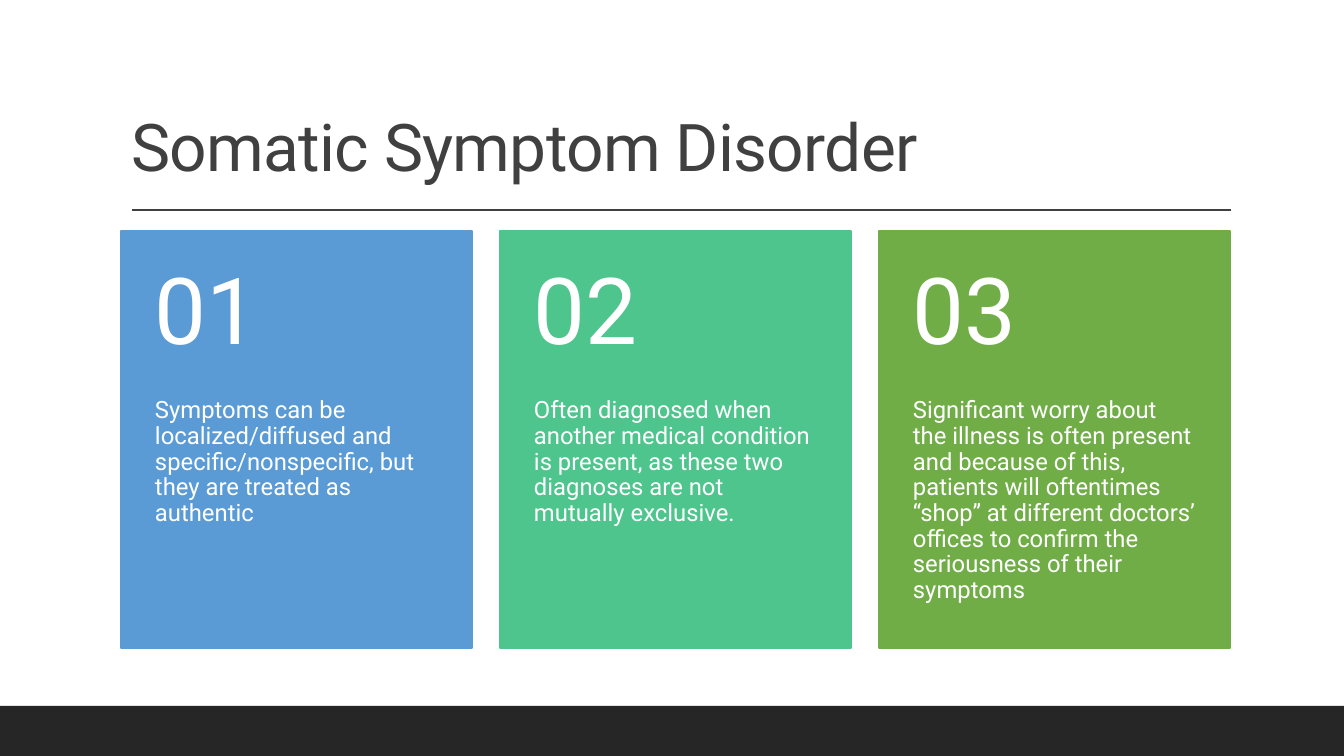
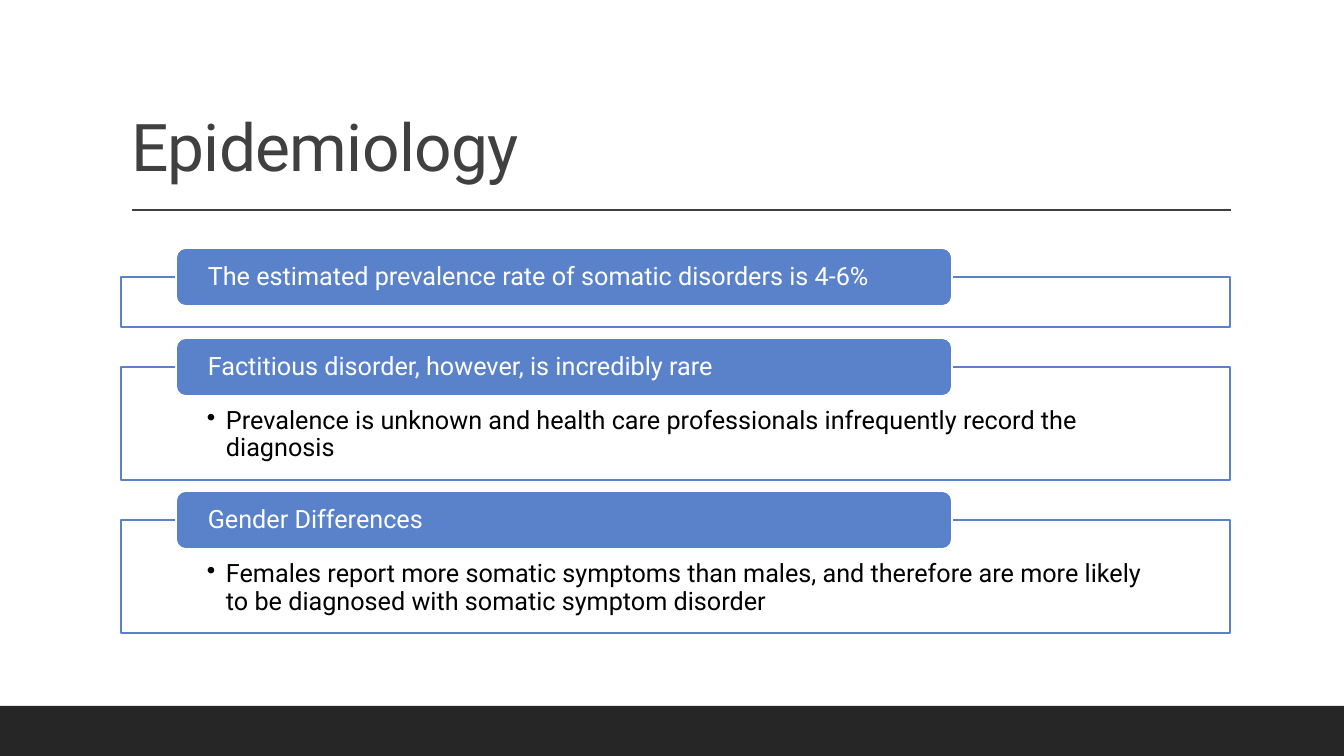
"""Build two slides on somatic symptom disorder and its epidemiology."""
from lxml.etree import SubElement
from pptx import Presentation
from pptx.dml.color import RGBColor
from pptx.enum.shapes import MSO_CONNECTOR, MSO_SHAPE
from pptx.enum.text import MSO_ANCHOR, MSO_AUTO_SIZE, PP_ALIGN
from pptx.oxml.ns import qn
from pptx.util import Pt

SLIDE_WIDTH, SLIDE_HEIGHT = 1344, 756
PX = 12192000 // SLIDE_WIDTH
FONT = "Roboto"
WHITE, BLACK, CHARCOAL, NEAR_BLACK = "FFFFFF", "000000", "404040", "262626"
HEADER_BLUE = "5A82CB"
LEFT, CONTENT_WIDTH = 121, 1109
RULE_LEFT, RULE_RIGHT, RULE_TOP = 132, 1231, 210
BAND_HEIGHT = 50

CARD_TOP, CARD_WIDTH, CARD_HEIGHT, CARD_GAP = 231, 351, 417, 28
NUMBER_HEIGHT = 167
CARDS = [
    ("5B9BD5", "Symptoms can be localized/diffused and specific/nonspecific, "
               "but they are treated as authentic"),
    ("4DC58D", "Often diagnosed when another medical condition is present, "
               "as these two diagnoses are not mutually exclusive."),
    ("70AD47", "Significant worry about the illness is often present and because of this, "
               "patients will oftentimes “shop” at different doctors’ offices "
               "to confirm the seriousness of their symptoms"),
]

FRAME_TOP, FRAME_GAP = 277, 40
HEADER_LEFT, HEADER_WIDTH, HEADER_HEIGHT = 176, 776, 58
BULLET_INDENT = 19
SECTIONS = [
    (50, "The estimated prevalence rate of somatic disorders is 4-6%", None),
    (113, "Factitious disorder, however, is incredibly rare",
     "Prevalence is unknown and health care professionals infrequently record the diagnosis"),
    (113, "Gender Differences",
     "Females report more somatic symptoms than males, and therefore are more likely "
     "to be diagnosed with somatic symptom disorder"),
]


def add_box(slide, kind, bounds, fill, line=None):
    shape = slide.shapes.add_shape(kind, *[length * PX for length in bounds])
    shape.shadow.inherit = False
    shape.fill.solid()
    shape.fill.fore_color.rgb = RGBColor.from_string(fill)
    if line:
        shape.line.color.rgb = RGBColor.from_string(line)
        shape.line.width = Pt(1.25)
    else:
        shape.line.fill.background()
    return shape


def write(shape, text, size, color, anchor, margins):
    frame = shape.text_frame
    frame.word_wrap = True
    frame.auto_size = MSO_AUTO_SIZE.NONE
    frame.vertical_anchor = anchor
    (frame.margin_left, frame.margin_top,
     frame.margin_right, frame.margin_bottom) = [margin * PX for margin in margins]
    paragraph = frame.paragraphs[0]
    paragraph.alignment = PP_ALIGN.LEFT
    paragraph.line_spacing = 0.9
    run = paragraph.add_run()
    run.text = text
    run.font.name = FONT
    run.font.size = Pt(size)
    run.font.color.rgb = RGBColor.from_string(color)
    return paragraph


presentation = Presentation()
presentation.slide_width = SLIDE_WIDTH * PX
presentation.slide_height = SLIDE_HEIGHT * PX
title_only = presentation.slide_layouts[5]

slides = []
for heading in ("Somatic Symptom Disorder", "Epidemiology"):
    slide = presentation.slides.add_slide(title_only)
    title = slide.shapes.title
    title.left, title.top = LEFT * PX, 31 * PX
    title.width, title.height = CONTENT_WIDTH * PX, 160 * PX
    paragraph = write(title, heading, 47, CHARCOAL, MSO_ANCHOR.BOTTOM, (10, 5, 10, 5))
    paragraph.runs[0]._r.get_or_add_rPr().set("spc", "-50")

    rule = slide.shapes.add_connector(
        MSO_CONNECTOR.STRAIGHT,
        RULE_LEFT * PX, RULE_TOP * PX, RULE_RIGHT * PX, RULE_TOP * PX)
    rule.line.color.rgb = RGBColor.from_string(CHARCOAL)
    rule.line.width = Pt(1)
    SubElement(rule._element.spPr, qn("a:effectLst"))

    add_box(slide, MSO_SHAPE.RECTANGLE,
            (0, SLIDE_HEIGHT - BAND_HEIGHT, SLIDE_WIDTH, BAND_HEIGHT), NEAR_BLACK)
    slides.append(slide)

disorder_slide, epidemiology_slide = slides

for index, (color, description) in enumerate(CARDS):
    left = LEFT + index * (CARD_WIDTH + CARD_GAP)
    card = add_box(disorder_slide, MSO_SHAPE.RECTANGLE,
                   (left, CARD_TOP, CARD_WIDTH, CARD_HEIGHT), color, color)
    write(card, description, 17, WHITE, MSO_ANCHOR.TOP, (34, NUMBER_HEIGHT, 34, 36))
    number = disorder_slide.shapes.add_textbox(
        left * PX, CARD_TOP * PX, CARD_WIDTH * PX, NUMBER_HEIGHT * PX)
    write(number, f"{index + 1:02}", 66, WHITE, MSO_ANCHOR.MIDDLE, (34, 18, 34, 18))

top = FRAME_TOP
for height, heading, detail in SECTIONS:
    frame = add_box(epidemiology_slide, MSO_SHAPE.RECTANGLE,
                    (LEFT, top, CONTENT_WIDTH, height), WHITE, HEADER_BLUE)
    if detail:
        paragraph = write(frame, detail, 18, BLACK, MSO_ANCHOR.TOP, (86, 41, 86, 14))
        properties = paragraph._p.get_or_add_pPr()
        properties.set("marL", str(BULLET_INDENT * PX))
        properties.set("indent", str(-BULLET_INDENT * PX))
        SubElement(properties, qn("a:buChar"), char="•")
    header = add_box(epidemiology_slide, MSO_SHAPE.ROUNDED_RECTANGLE,
                     (HEADER_LEFT, top - HEADER_HEIGHT // 2, HEADER_WIDTH, HEADER_HEIGHT),
                     HEADER_BLUE, WHITE)
    write(header, heading, 18, WHITE, MSO_ANCHOR.MIDDLE, (29, 0, 29, 0))
    top += height + FRAME_GAP

presentation.save("out.pptx")
